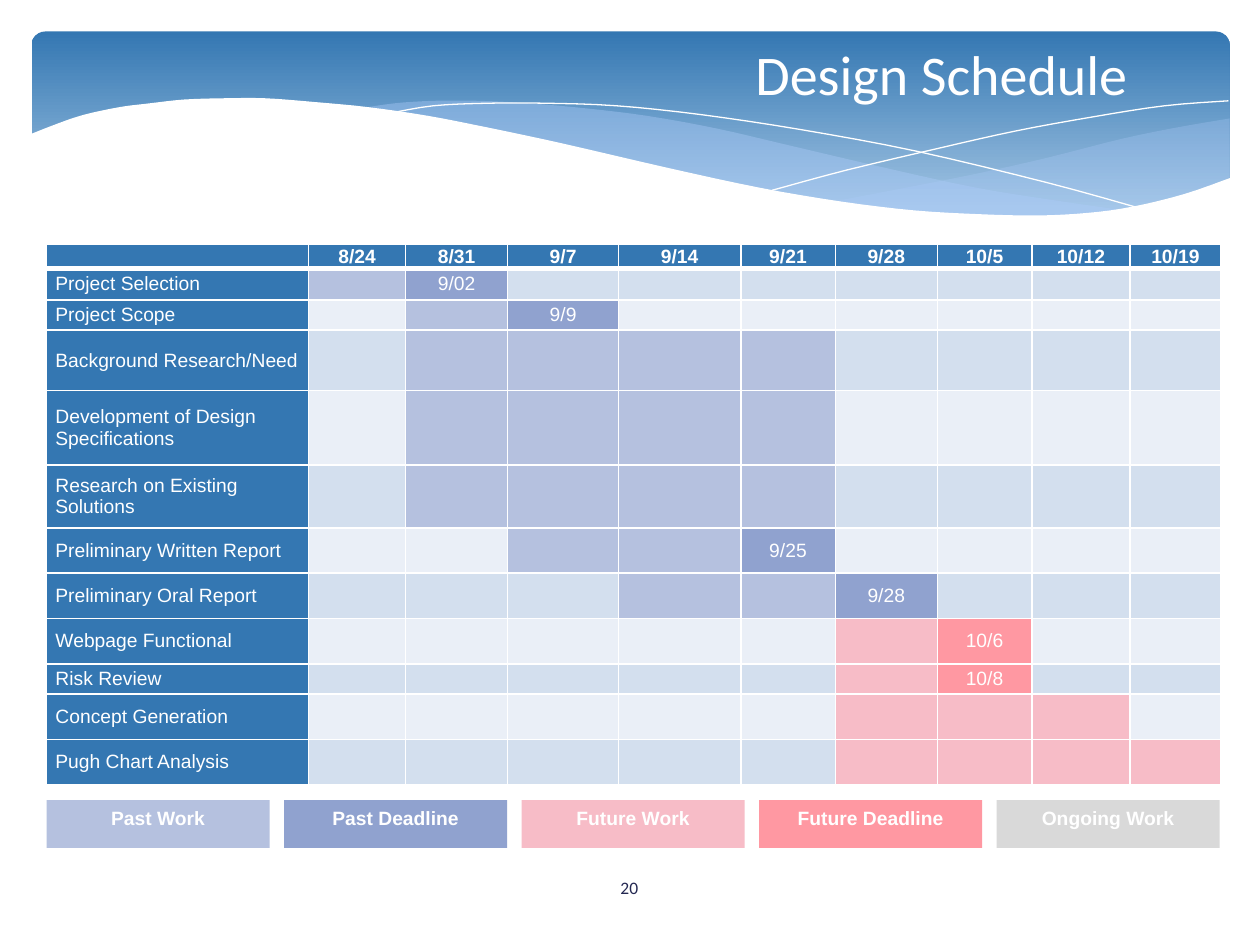
from pptx import Presentation
from pptx.dml.color import RGBColor
from pptx.enum.shapes import MSO_SHAPE as Shape
from pptx.enum.text import MSO_ANCHOR as Anchor, PP_ALIGN as Align
from pptx.oxml import parse_xml
from pptx.oxml.ns import nsdecls
from pptx.util import Inches, Pt

BLUE, WHITE, SKY = "3477B2", "FFFFFF", "ACCBF9"
PAST, PAST_DUE, FUTURE, FUTURE_DUE, ONGOING = "B5C1DF", "90A2CF", "F7BCC7", "FF98A2", "D9D9D9"
BANDS = ["D3DFEE", "EAEFF7"]


def paint(target, color):
    if hasattr(target, "solid"):
        target.solid()
        target.fore_color.rgb = RGBColor.from_string(color)
    else:
        target.rgb = RGBColor.from_string(color)


def write(frame, text, size, font, color, align, bold=False):
    paragraph = frame.paragraphs[0]
    paragraph.alignment = align
    run = paragraph.add_run()
    run.text = text
    run.font.size, run.font.name, run.font.bold = Pt(size), font, bold
    paint(run.font.color, color)


presentation = Presentation()
presentation.slide_width, presentation.slide_height = Inches(10), Inches(7.5)
column = presentation.slide_width // 1000
row = presentation.slide_height // 750
slide = presentation.slides.add_slide(presentation.slide_layouts[5])
shapes = slide.shapes

banner = shapes.add_shape(Shape.ROUNDED_RECTANGLE, 25 * column, 25 * row, 951 * column, 156 * row)
banner.adjustments[0] = 0.07
banner.shadow.inherit = False
banner.line.fill.background()
banner.fill.gradient()
banner.fill.gradient_angle = 270
for stop, color, position in zip(banner.fill.gradient_stops, [BLUE, "A1C4E3"], [0, 0.9]):
    paint(stop.color, color)
    stop.position = position

waves = [
    (SKY, 29, [
        [(976, 94), (935, 101), (891, 110), (832, 125), (779, 137), (729, 147), (661, 160)],
        [(661, 160), (705, 165), (745, 169), (781, 172), (814, 172), (854, 170), (889, 166),
         (921, 160), (949, 152), (976, 141)],
    ]),
    (SKY, 40, [
        [(893, 167), (837, 159), (775, 149), (706, 134), (629, 116), (569, 102), (514, 92),
         (465, 86), (420, 82), (380, 80), (344, 80), (313, 82), (286, 86)],
        [(286, 86), (342, 94), (404, 106), (449, 116), (530, 135), (601, 150), (665, 161),
         (722, 168), (773, 172), (818, 173), (857, 171), (893, 167)],
    ]),
    (None, 100, [
        [(309, 90), (344, 84), (387, 82), (433, 82), (489, 84), (556, 91), (636, 103),
         (727, 120), (831, 145), (907, 166)],
    ]),
    (None, 100, [
        [(613, 151), (672, 135), (748, 117), (806, 104), (866, 93), (924, 84), (975, 80)],
    ]),
    (WHITE, 100, [
        [(977, 141), (940, 154), (899, 164), (863, 169), (823, 171), (778, 170), (726, 167),
         (668, 160), (603, 149), (529, 133), (447, 114), (391, 102), (340, 92), (292, 85),
         (250, 81), (211, 78), (177, 78), (146, 79), (119, 82), (95, 85), (67, 91),
         (46, 98), (23, 107)],
        [(23, 224), (977, 224)],
    ]),
]
for color, opacity, curves in waves:
    points = []
    for curve in curves:
        knots = [curve[0], *curve, curve[-1]]
        for before, start, end, after in zip(knots, knots[1:], knots[2:], knots[3:]):
            for t in (0, 0.25, 0.5, 0.75):
                x, y = [
                    b + t * (c - a + t * (2 * a - 5 * b + 4 * c - d + t * (3 * b - 3 * c + d - a))) / 2
                    if len(curve) > 2 else b + t * (c - b)
                    for a, b, c, d in zip(before, start, end, after)
                ]
                points.append((x * column, y * row))
        points.append((curve[-1][0] * column, curve[-1][1] * row))
    builder = shapes.build_freeform(*points[0])
    builder.add_line_segments(points[1:], close=color is not None)
    wave = builder.convert_to_shape()
    wave.shadow.inherit = False
    if color:
        paint(wave.fill, color)
        wave.line.fill.background()
        fill_color = wave.fill._xPr.solidFill[0]
        fill_color.append(parse_xml(f'<a:alpha {nsdecls("a")} val="{opacity * 1000}"/>'))
    else:
        wave.fill.background()
        paint(wave.line.fill, WHITE)
        wave.line.width = Pt(0)

title = shapes.title
title.left, title.top, title.width, title.height = 225 * column, 26 * row, 680 * column, 137 * row
title.text_frame.vertical_anchor = Anchor.TOP
write(title.text_frame, "Design Schedule", 32, "Calibri", WHITE, Align.RIGHT)

dates = ["8/24", "8/31", "9/7", "9/14", "9/21", "9/28", "10/5", "10/12", "10/19"]
tasks = [
    ("Project Selection", 25, 1, 2, PAST, "9/02"),
    ("Project Scope", 24, 2, 3, PAST, "9/9"),
    ("Background Research/Need", 48, 2, 5, PAST, ""),
    ("Development of Design Specifications", 59, 2, 5, PAST, ""),
    ("Research on Existing Solutions", 50, 2, 5, PAST, ""),
    ("Preliminary Written Report", 36, 3, 5, PAST, "9/25"),
    ("Preliminary Oral Report", 36, 4, 6, PAST, "9/28"),
    ("Webpage Functional", 36, 6, 7, FUTURE, "10/6"),
    ("Risk Review", 24, 6, 7, FUTURE, "10/8"),
    ("Concept Generation", 36, 6, 8, FUTURE, ""),
    ("Pugh Chart Analysis", 36, 6, 9, FUTURE, ""),
]
deadline_colors = {PAST: PAST_DUE, FUTURE: FUTURE_DUE}
grid = [[("", BLUE)] + [(date, BLUE) for date in dates]]
for index, (task, height, first, last, color, deadline) in enumerate(tasks):
    line = [(task, BLUE)] + [("", BANDS[index % 2])] * len(dates)
    line[first:last + 1] = [("", color)] * (last - first + 1)
    if deadline:
        line[last] = (deadline, deadline_colors[color])
    grid.append(line)

widths = [208, 77, 81, 88, 97, 75, 81, 75, 78, 72]
heights = [19] + [task[1] for task in tasks]
table = shapes.add_table(len(grid), len(widths), 37 * column, 194 * row,
                         sum(widths) * column, sum(heights) * row).table
for table_column, width in zip(table.columns, widths):
    table_column.width = width * column
for table_row, height in zip(table.rows, heights):
    table_row.height = height * row
for r, line in enumerate(grid):
    for c, (text, color) in enumerate(line):
        cell = table.cell(r, c)
        cell.margin_left = cell.margin_right = 7 * column
        cell.margin_top = cell.margin_bottom = 0
        cell.vertical_anchor = Anchor.MIDDLE
        for side in "LRTB":
            thick = (side == "B" and r == 0) or (side == "T" and r == 1)
            cell._tc.get_or_add_tcPr().append(parse_xml(
                f'<a:ln{side} {nsdecls("a")} w="{Pt(3 if thick else 1)}"><a:solidFill>'
                f'<a:srgbClr val="{WHITE}"/></a:solidFill></a:ln{side}>'))
        paint(cell.fill, color)
        if text:
            write(cell.text_frame, text, 11, "Arial", WHITE, Align.CENTER if c else Align.LEFT, r == 0)
        else:
            cell.text_frame.paragraphs[0]._p.get_or_add_endParaRPr().set("sz", "1100")

legend = [("Past Work", PAST), ("Past Deadline", PAST_DUE), ("Future Work", FUTURE),
          ("Future Deadline", FUTURE_DUE), ("Ongoing Work", ONGOING)]
pitch = 188.5
for index, (label, color) in enumerate(legend):
    key = shapes.add_shape(Shape.RECTANGLE, int((37 + index * pitch) * column), 635 * row,
                           177 * column, 38 * row)
    key.shadow.inherit = False
    key.line.fill.background()
    paint(key.fill, color)
    key.text_frame.vertical_anchor = Anchor.TOP
    write(key.text_frame, label, 11, "Arial", WHITE, Align.CENTER, True)

page_number = shapes.add_textbox(436 * column, 684 * row, 127 * column, 40 * row)
page_number.text_frame.word_wrap = True
page_number.text_frame.vertical_anchor = Anchor.MIDDLE
write(page_number.text_frame, "20", 10, "Calibri", "242852", Align.CENTER)

shapes._spTree.append(title._element)
presentation.save("out.pptx")
